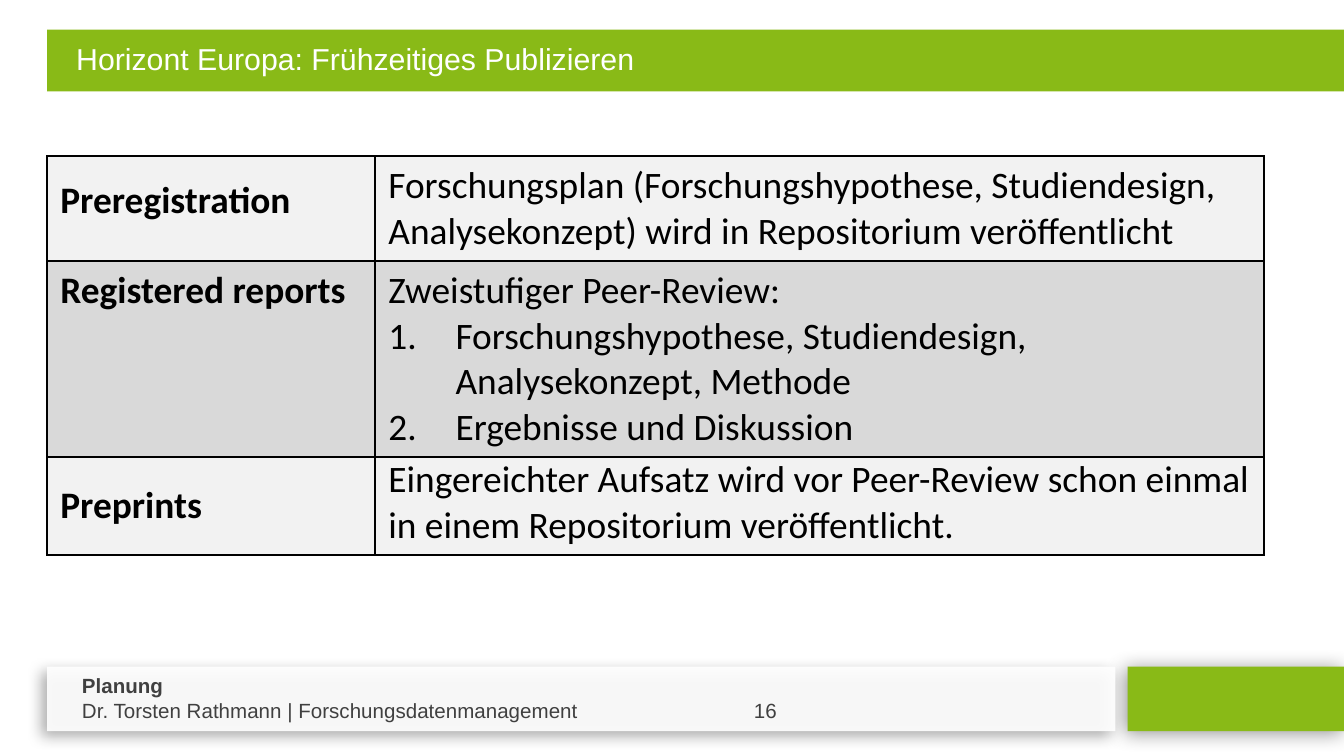
from lxml import etree
from pptx import Presentation
from pptx.dml.color import RGBColor
from pptx.enum.shapes import MSO_SHAPE
from pptx.enum.text import MSO_ANCHOR, MSO_AUTO_SIZE, PP_ALIGN
from pptx.oxml import parse_xml
from pptx.util import Cm, Pt

RECT = MSO_SHAPE.RECTANGLE
TOP, MID = MSO_ANCHOR.TOP, MSO_ANCHOR.MIDDLE
LEFT = PP_ALIGN.LEFT
FIXED = MSO_AUTO_SIZE.NONE
NS = "http://schemas.openxmlformats.org/drawingml/2006/main"
GREEN, WHITE, BLACK = "89BA17", "FFFFFF", "000000"
LIGHT, GREY, DARK = "F2F2F2", "D9D9D9", "404040"


def paint(fill, color):
    fill.solid()
    fill.fore_color.rgb = RGBColor.from_string(color)


def write(para, text, font, size, color, bold=False):
    run = para.add_run()
    run.text = text
    run.font.name, run.font.size, run.font.bold = font, Pt(size), bold
    paint(run.font.fill, color)


prs = Presentation()
prs.slide_width, prs.slide_height = Cm(25.4), Cm(14.29)
slide = prs.slides.add_slide(prs.slide_layouts[5])
shapes = slide.shapes

# Bars: left, top, width, height, colour, shadow (alpha, blur, distance, angle)
bars = [
    (21.31, 12.6, 4.09, 1.22, GREEN, (42, 10.8, 2, 142)),
    (0.89, 12.6, 20.19, 1.22, WHITE, (34, 7.5, 4, 145)),
    (0.89, 0.56, 24.51, 1.17, GREEN, None),
]
for x, y, w, h, color, shade in bars:
    bar = shapes.add_shape(RECT, Cm(x), Cm(y), Cm(w), Cm(h))
    bar.shadow.inherit = False
    paint(bar.fill, color)
    bar.line.fill.background()
    props = bar._element.spPr
    if color == WHITE:
        tone = props.find(f".//{{{NS}}}srgbClr")
        etree.SubElement(tone, f"{{{NS}}}alpha", val="91000")
    if shade:
        alpha, blur, dist, angle = shade
        props.find(f"{{{NS}}}effectLst").append(parse_xml(
            f'<a:outerShdw xmlns:a="{NS}" blurRad="{Pt(blur)}" dist="{Pt(dist)}"'
            f' dir="{angle * 60000}" algn="ctr" rotWithShape="0">'
            f'<a:srgbClr val="{BLACK}"><a:alpha val="{alpha * 1000}"/></a:srgbClr>'
            '</a:outerShdw>'))

# Title, brought in front of its bar
title = shapes.title
title.left, title.top, title.width, title.height = Cm(0.89), Cm(0.56), Cm(24.51), Cm(0.89)
shapes._spTree.append(title._element)
frame = title.text_frame
frame.auto_size, frame.vertical_anchor = FIXED, TOP
frame.margin_left = frame.margin_right = Cm(0.25)
frame.margin_top, frame.margin_bottom = Cm(0.2), Cm(0.13)
para = frame.paragraphs[0]
para.alignment = LEFT
para._p.get_or_add_pPr().set("marL", str(Cm(0.3)))
write(para, "Horizont Europa: Frühzeitiges Publizieren", "Arial", 16.2, WHITE)

# Footer, with the page number at a tab stop
foot = shapes.add_textbox(Cm(1.3), Cm(12.6), Cm(15.19), Cm(1.19)).text_frame
foot.word_wrap = True
write(foot.paragraphs[0], "Planung", "Arial", 11, DARK, True)
para = foot.add_paragraph()
tabs = etree.SubElement(para._p.get_or_add_pPr(), f"{{{NS}}}tabLst")
etree.SubElement(tabs, f"{{{NS}}}tab", pos=str(Cm(12.7)), algn="l")
write(para, "Dr. Torsten Rathmann | Forschungsdatenmanagement\t16", "Arial", 11, DARK)

# Table: height, fill, then per cell its anchor, top and bottom margin, paragraphs
rows = [
    (1.98, LIGHT,
     (TOP, 0.41, 0.41, ["Preregistration"]),
     (MID, 0.13, 0.13, ["Forschungsplan (Forschungshypothese, Studiendesign, "
                        "Analysekonzept) wird in Repositorium veröffentlicht"])),
    (3.71, GREY,
     (TOP, 0.13, 0.13, ["Registered reports"]),
     (TOP, 0.13, 0.13, ["Zweistufiger Peer-Review:",
                        "Forschungshypothese, Studiendesign, Analysekonzept, Methode",
                        "Ergebnisse und Diskussion"])),
    (1.85, LIGHT,
     (MID, 0.41, 0.41, ["Preprints"]),
     (MID, 0, 0.13, ["Eingereichter Aufsatz wird vor Peer-Review schon einmal "
                     "in einem Repositorium veröffentlicht."])),
]
total = sum(row[0] for row in rows)
table = shapes.add_table(3, 2, Cm(0.89), Cm(2.95), Cm(23), Cm(total)).table
table.first_row = table.horz_banding = False
table.columns[0].width, table.columns[1].width = Cm(6.2), Cm(16.8)

for r, (height, color, *cells) in enumerate(rows):
    table.rows[r].height = Cm(height)
    for c, (anchor, top, bottom, texts) in enumerate(cells):
        cell = table.cell(r, c)
        paint(cell.fill, color)
        cell.vertical_anchor = anchor
        cell.margin_left = cell.margin_right = Cm(0.25)
        cell.margin_top, cell.margin_bottom = Cm(top), Cm(bottom)
        props = cell._tc.get_or_add_tcPr()
        for i, side in enumerate(("lnL", "lnR", "lnT", "lnB")):
            props.insert(i, parse_xml(
                f'<a:{side} xmlns:a="{NS}" w="{Pt(1)}"><a:solidFill>'
                f'<a:srgbClr val="{BLACK}"/></a:solidFill></a:{side}>'))
        # Paragraphs after the first are numbered
        for i, text in enumerate(texts):
            para = cell.text_frame.add_paragraph() if i else cell.text_frame.paragraphs[0]
            if i:
                style = para._p.get_or_add_pPr()
                style.set("marL", str(Cm(1.27)))
                style.set("indent", str(-Cm(1.27)))
                etree.SubElement(style, f"{{{NS}}}buFont", typeface="+mj-lt")
                etree.SubElement(style, f"{{{NS}}}buAutoNum", type="arabicPeriod")
            write(para, text, "Calibri", 20, BLACK, c == 0)

prs.save("out.pptx")
